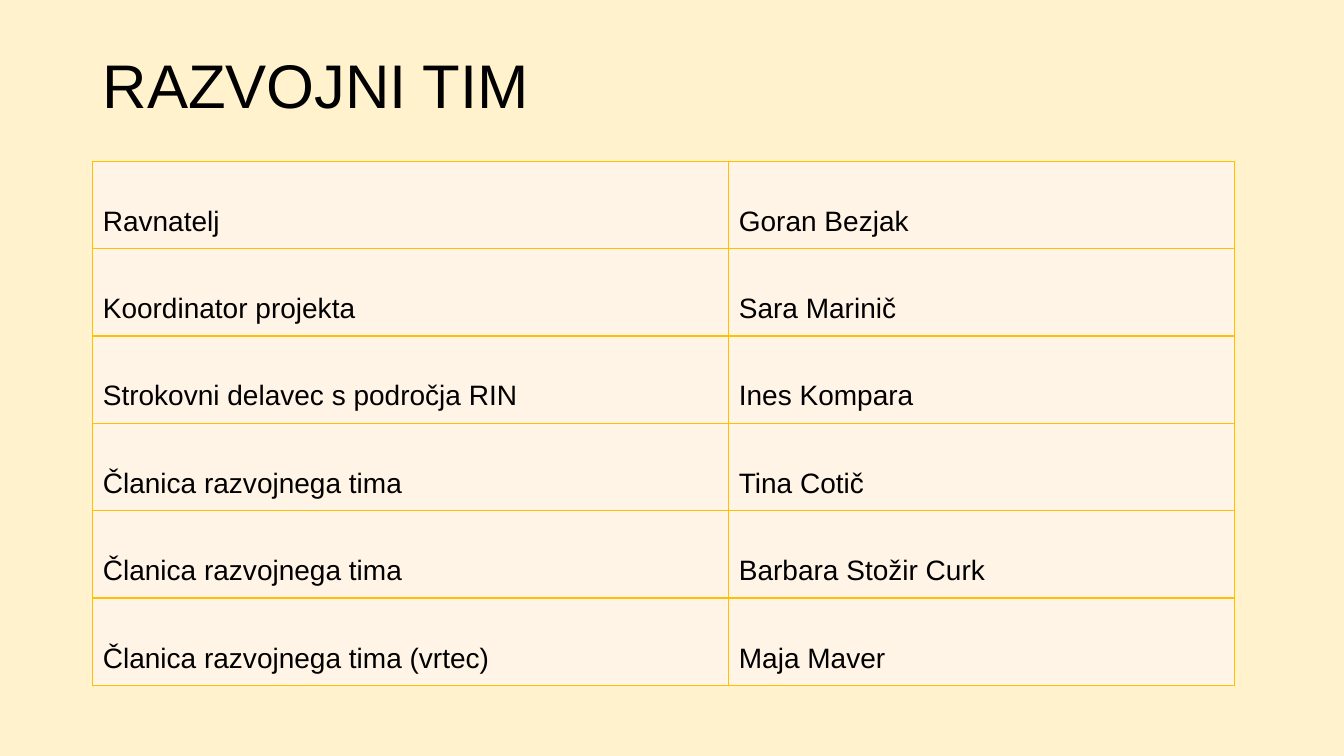
from lxml import etree
from pptx import Presentation
from pptx.dml.color import RGBColor
from pptx.enum import text
from pptx.oxml import ns
from pptx.util import Pt

CREAM = RGBColor(0xFF, 0xF2, 0xCC)
PEACH = RGBColor(0xFF, 0xF4, 0xE6)
GOLD = RGBColor(0xFF, 0xC0, 0x00)
BLACK = RGBColor(0, 0, 0)

TEAM = [
    ("Ravnatelj", "Goran Bezjak"),
    ("Koordinator projekta", "Sara Marinič"),
    ("Strokovni delavec s področja RIN", "Ines Kompara"),
    ("Članica razvojnega tima", "Tina Cotič"),
    ("Članica razvojnega tima", "Barbara Stožir Curk"),
    ("Članica razvojnega tima (vrtec)", "Maja Maver"),
]
LEFT = 66.24
COLUMN_WIDTHS = (454.32, 361.44)
ROW_HEIGHT = 62.4


def add_span(para, words, size):
    span = para.add_run()
    span.text = words
    span.font.name = "Arial"
    span.font.size = Pt(size)
    span.font.color.rgb = BLACK


def add_borders(cell, color, width):
    properties = cell._tc.get_or_add_tcPr()
    for position, side in enumerate(("lnL", "lnR", "lnT", "lnB")):
        line = etree.Element(ns.qn(f"a:{side}"), w=str(Pt(width)))
        fill = etree.SubElement(line, ns.qn("a:solidFill"))
        etree.SubElement(fill, ns.qn("a:srgbClr"), val=str(color))
        properties.insert(position, line)


# Page
deck = Presentation()
deck.slide_width, deck.slide_height = Pt(960), Pt(540)
page = deck.slides.add_slide(deck.slide_layouts[6])
page.background.fill.solid()
page.background.fill.fore_color.rgb = CREAM

# Title
box = page.shapes.add_textbox(Pt(LEFT), Pt(10.8), Pt(828), Pt(104.4))
frame = box.text_frame
frame.word_wrap = True
frame.vertical_anchor = text.MSO_ANCHOR.MIDDLE
title = frame.paragraphs[0]
title.line_spacing = 0.9
add_span(title, "RAZVOJNI TIM", 44)

# Team table
table = page.shapes.add_table(
    len(TEAM), len(COLUMN_WIDTHS), Pt(LEFT), Pt(115.2),
    Pt(sum(COLUMN_WIDTHS)), Pt(ROW_HEIGHT * len(TEAM))).table
table.first_row = False
table.horz_banding = False
for column, width in zip(table.columns, COLUMN_WIDTHS):
    column.width = Pt(width)

for row, member in zip(table.rows, TEAM):
    row.height = Pt(ROW_HEIGHT)
    for cell, words in zip(row.cells, member):
        cell.fill.solid()
        cell.fill.fore_color.rgb = PEACH
        cell.vertical_anchor = text.MSO_ANCHOR.BOTTOM
        cell.margin_bottom = Pt(8.2)
        add_borders(cell, GOLD, 1)
        add_span(cell.text_frame.paragraphs[0], words, 20)

deck.save("out.pptx")
